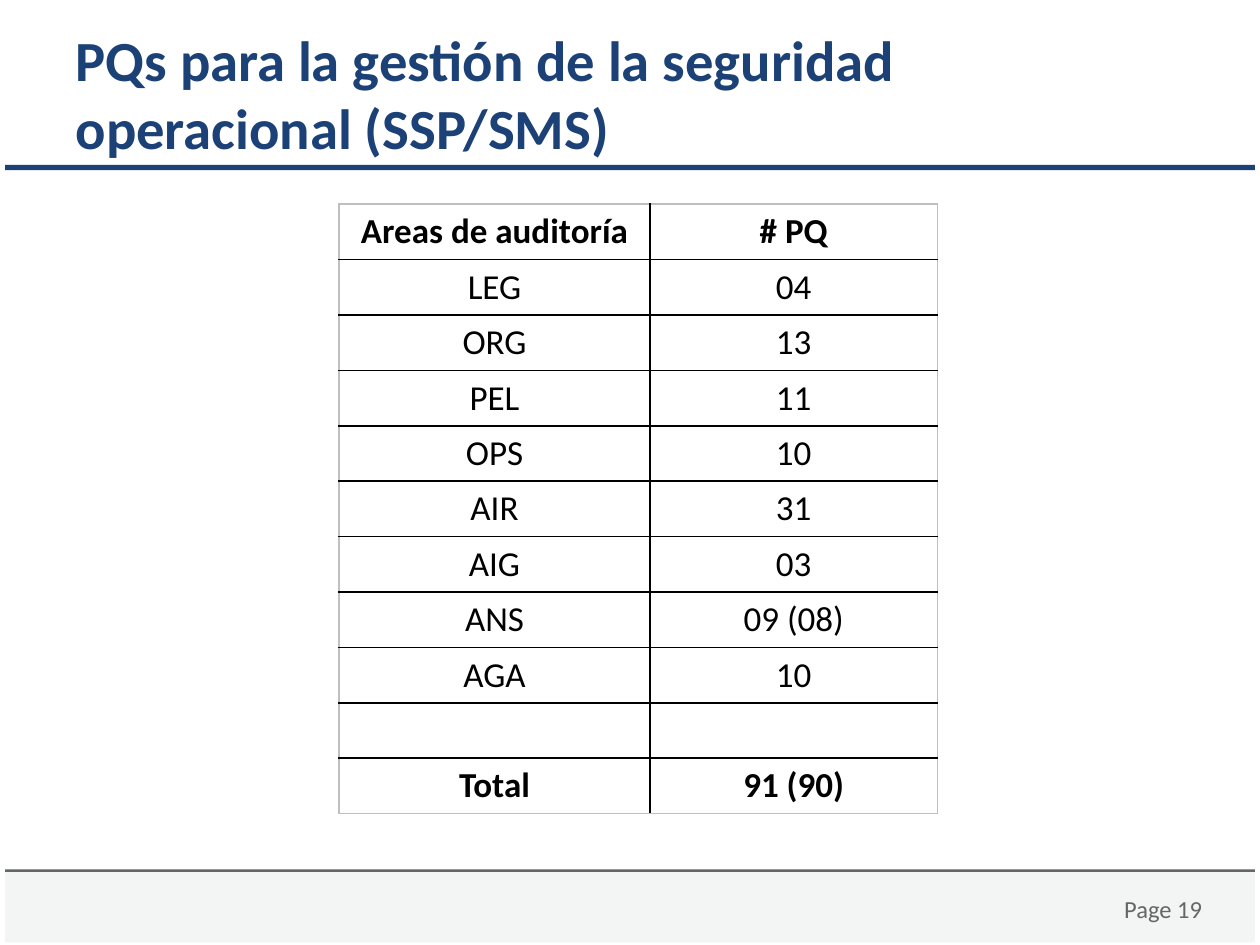
from dataclasses import dataclass

from lxml.etree import SubElement
from pptx import Presentation
from pptx.dml.color import RGBColor
from pptx.enum.shapes import MSO_SHAPE
from pptx.enum.text import MSO_ANCHOR, MSO_AUTO_SIZE, PP_ALIGN
from pptx.oxml.ns import qn
from pptx.util import Inches, Pt


@dataclass(frozen=True)
class Theme:
    font: str = "Calibri"
    navy: str = "1B4177"
    gray: str = "666666"
    band: str = "F3F4F4"
    black: str = "000000"
    frame: str = "BFBFBF"
    title_size: float = 32.4
    table_size: float = 20
    page_size: float = 14
    border: float = 1


THEME = Theme()
ROWS = [
    ("Areas de auditoría", "# PQ"),
    ("LEG", "04"),
    ("ORG", "13"),
    ("PEL", "11"),
    ("OPS", "10"),
    ("AIR", "31"),
    ("AIG", "03"),
    ("ANS", "09 (08)"),
    ("AGA", "10"),
    ("", ""),
    ("Total", "91 (90)"),
]


def write(tf, text, size, color, bold=False, align=PP_ALIGN.LEFT):
    tf.text = text
    p = tf.paragraphs[0]
    p.alignment = align
    for r in p.runs:
        r.font.name = THEME.font
        r.font.size = Pt(size)
        r.font.bold = bold
        r.font.color.rgb = RGBColor.from_string(color)


def add_bar(s, left, top, width, height, color):
    sp = s.shapes.add_shape(
        MSO_SHAPE.RECTANGLE, Inches(left), Inches(top), Inches(width), Inches(height))
    sp.shadow.inherit = False
    sp.fill.solid()
    sp.fill.fore_color.rgb = RGBColor.from_string(color)
    sp.line.fill.background()


def add_footer(s, left, top, width, height):
    add_bar(s, left, top, width, height, THEME.band)
    sp = s.shapes.add_textbox(
        Inches(left + width - 2.65), Inches(top + 0.15), Inches(2.33), Inches(0.4))
    sp.text_frame.word_wrap = True
    write(sp.text_frame, "Page 19", THEME.page_size, THEME.gray, align=PP_ALIGN.RIGHT)
    add_bar(s, left, top, width, 0.02, THEME.gray)


def add_title(s, left, top, width, height):
    add_bar(s, 0.04, 1.31, 9.92, 0.04, THEME.navy)
    sp = s.shapes.title
    sp.left, sp.top = Inches(left), Inches(top)
    sp.width, sp.height = Inches(width), Inches(height)
    tf = sp.text_frame
    tf.word_wrap = True
    tf.auto_size = MSO_AUTO_SIZE.NONE
    tf.vertical_anchor = MSO_ANCHOR.MIDDLE
    write(tf, "PQs para la gestión de la seguridad operacional (SSP/SMS)",
          THEME.title_size, THEME.navy, bold=True)


def set_borders(cell, outer_sides):
    tcPr = cell._tc.get_or_add_tcPr()
    for side, is_outer in outer_sides.items():
        ln = SubElement(tcPr, qn(f"a:{side}"), w=str(Pt(THEME.border)))
        fill = SubElement(ln, qn("a:solidFill"))
        SubElement(fill, qn("a:srgbClr"), val=THEME.frame if is_outer else THEME.black)


def add_pq_table(s, left, top, width, height):
    last_row, last_col = len(ROWS) - 1, len(ROWS[0]) - 1
    table = s.shapes.add_table(
        len(ROWS), len(ROWS[0]),
        Inches(left), Inches(top), Inches(width), Inches(height)).table
    table.horz_banding = False
    table.columns[0].width = Inches(2.47)
    table.columns[1].width = Inches(width - 2.47)
    for i, row in enumerate(ROWS):
        table.rows[i].height = Inches(height / len(ROWS))
        for j, text in enumerate(row):
            cell = table.cell(i, j)
            write(cell.text_frame, text, THEME.table_size, THEME.black,
                  bold=i in (0, last_row), align=PP_ALIGN.CENTER)
            set_borders(cell, {"lnL": j == 0, "lnR": j == last_col,
                               "lnT": i == 0, "lnB": i == last_row})
            cell.fill.background()


def main():
    prs = Presentation()
    prs.slide_width, prs.slide_height = Inches(10), Inches(7.5)
    s = prs.slides.add_slide(prs.slide_layouts[5])
    add_footer(s, 0.04, 6.9, 9.92, 0.58)
    add_title(s, 0.5, 0.11, 7.57, 1.25)
    add_pq_table(s, 2.69, 1.62, 4.75, 4.84)
    prs.save("out.pptx")


if __name__ == "__main__":
    main()
